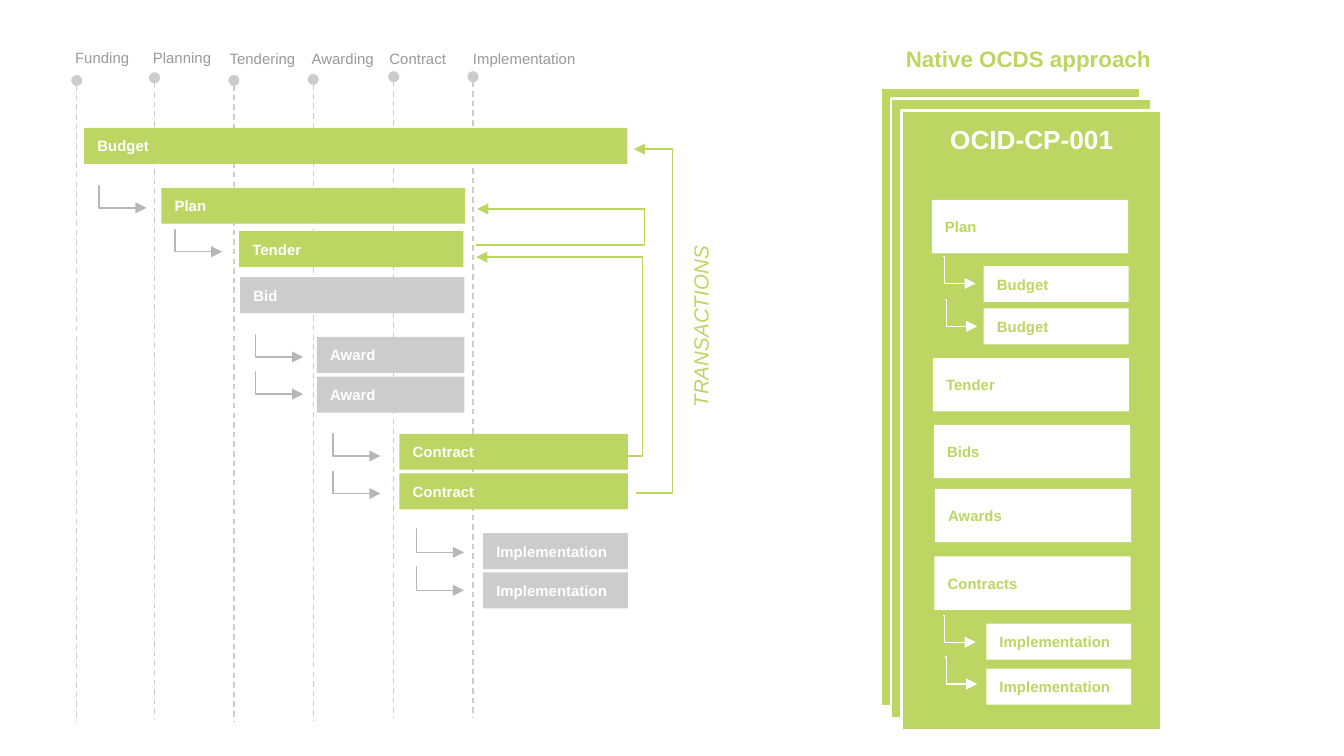
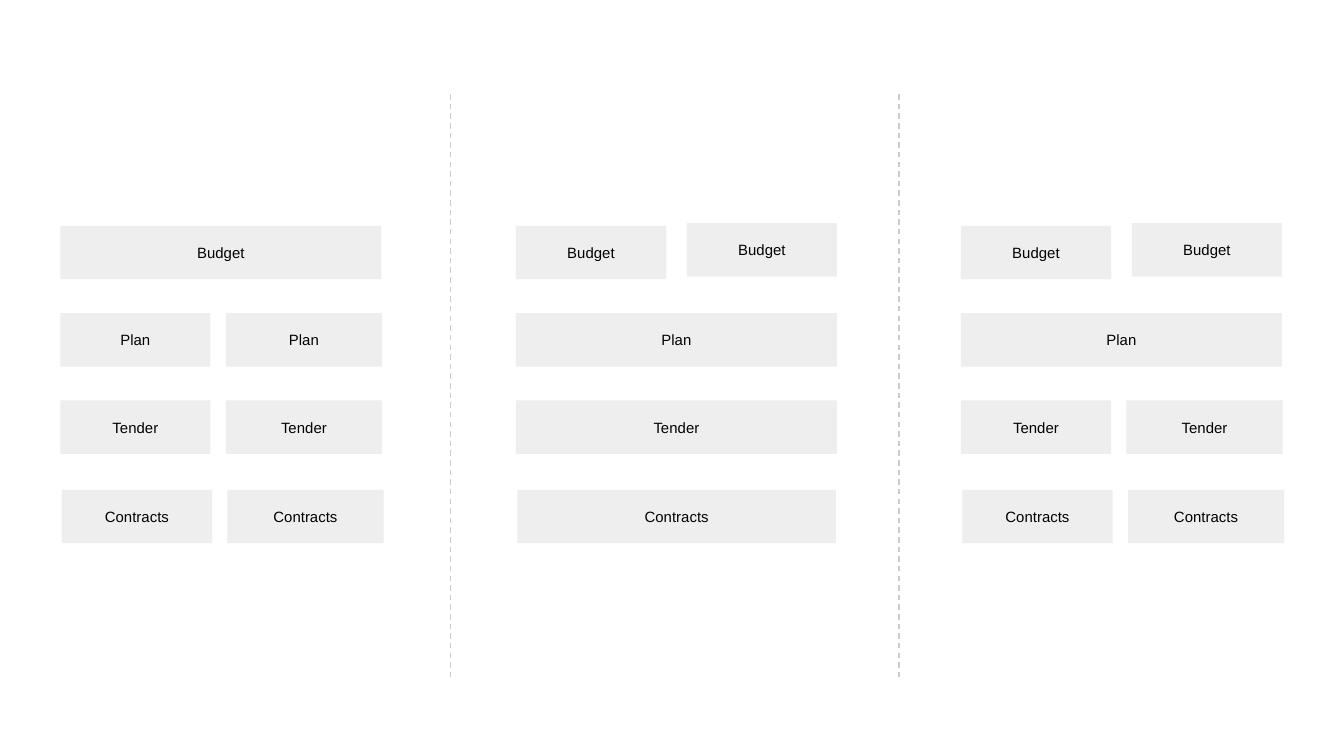
from lxml.etree import SubElement as Sub
from pptx import Presentation
from pptx.dml.color import RGBColor
from pptx.enum.dml import MSO_LINE
from pptx.enum.shapes import MSO_CONNECTOR as LINK, MSO_SHAPE
from pptx.enum.text import MSO_ANCHOR as ANCHOR, MSO_AUTO_SIZE as FIT, PP_ALIGN as ALIGN
from pptx.oxml.ns import qn
from pptx.util import Cm, Pt

GREEN = RGBColor(0xBC, 0xD5, 0x63)
WHITE = RGBColor(0xFF, 0xFF, 0xFF)
BLACK = RGBColor(0, 0, 0)
SILVER = RGBColor(0xCC, 0xCC, 0xCC)
PALE = RGBColor(0xEE, 0xEE, 0xEE)
STEEL = RGBColor(0xB7, 0xB7, 0xB7)
GREY = RGBColor(0x99, 0x99, 0x99)
RECT = MSO_SHAPE.RECTANGLE


def dress(shape, text, ink, size=8, bold=False, fill=None,
          align=ALIGN.LEFT, anchor=ANCHOR.TOP):
    """Fill a shape and set its text; return the paragraph and its run."""
    if fill is not None:
        shape.shadow.inherit = False
        shape.fill.solid()
        shape.fill.fore_color.rgb = fill
        shape.line.fill.background()
    frame = shape.text_frame
    frame.word_wrap = True
    frame.auto_size = FIT.NONE
    frame.vertical_anchor = anchor
    frame.margin_left = frame.margin_right = Cm(0.25)
    frame.margin_top = frame.margin_bottom = Cm(0.25)
    para = frame.paragraphs[0]
    para.alignment = align
    run = para.add_run()
    run.text = text
    run.font.name = "Arial"
    run.font.size = Pt(size)
    run.font.bold = bold
    run.font.color.rgb = ink
    return para, run


def wire(line, ink, dash=False, head=None, tail=None, bend=None):
    """Style a connector or an open outline."""
    line.line.color.rgb = ink
    line.line.width = Pt(0.75)
    if dash:
        line.line.dash_style = MSO_LINE.DASH
    props = line.element.spPr
    pen = props.find(qn("a:ln"))
    for tag, kind in (("a:headEnd", head), ("a:tailEnd", tail)):
        if kind:
            Sub(pen, qn(tag), type=kind)
    if bend is not None:
        guides = props.find(qn("a:prstGeom")).find(qn("a:avLst"))
        Sub(guides, qn("a:gd"), name="adj1", fmla=f"val {bend}")
    Sub(props, qn("a:effectLst"))


deck = Presentation()
deck.slide_width, deck.slide_height = Cm(25.4), Cm(14.29)

# Slide 1: process timeline beside the stacked record
slide = deck.slides.add_slide(deck.slide_layouts[5])
shapes = slide.shapes

title = shapes.title
title.left, title.top, title.width, title.height = map(Cm, (16.87, 0.61, 5.36, 0.89))
dress(title, "Native OCDS approach", GREEN, 12, True)

# Stacked cards, the front one named
for step in range(3):
    card = shapes.add_shape(RECT, Cm(16.64 + 0.2 * step), Cm(1.65 + 0.22 * step),
                            Cm(4.92), Cm(11.71))
    card.shadow.inherit = False
    card.fill.solid()
    card.fill.fore_color.rgb = GREEN
    card.line.color.rgb = WHITE
    card.line.width = Pt(1.5)
para, run = dress(card, "OCID-CP-001", WHITE, 14, True, align=ALIGN.CENTER)
para.space_before = Pt(10)

# Stages: label box, then the dashed line's start
stages = [
    ("Funding", 1.17, 0.66, 1.7, 1.45, 1.52),
    ("Planning", 2.64, 0.66, 1.7, 2.92, 1.47),
    ("Tendering", 4.09, 0.69, 2.18, 4.42, 1.52),
    ("Awarding", 5.64, 0.69, 2.18, 5.92, 1.5),
    ("Contract", 7.11, 0.69, 2.74, 7.44, 1.45),
    ("Implementation", 8.69, 0.69, 2.74, 8.94, 1.45),
]
for name, left, top, width, x, y in stages:
    line = shapes.add_connector(LINK.STRAIGHT, Cm(x), Cm(y), Cm(x), Cm(y + 12.12))
    wire(line, SILVER, dash=True, head="oval")
    label = shapes.add_textbox(Cm(left), Cm(top), Cm(width), Cm(0.89))
    dress(label, name, GREY)

# Timeline bars and record boxes
bars = [
    ("Budget", 1.59, 2.42, 10.27, GREEN),
    ("Plan", 3.05, 3.55, 5.74, GREEN),
    ("Tender", 4.52, 4.37, 4.24, GREEN),
    ("Bid", 4.54, 5.24, 4.24, SILVER),
    ("Award", 5.99, 6.37, 2.79, SILVER),
    ("Award", 5.99, 7.12, 2.79, SILVER),
    ("Contract", 7.55, 8.2, 4.32, GREEN),
    ("Contract", 7.55, 8.95, 4.32, GREEN),
    ("Implementation", 9.13, 10.08, 2.74, SILVER),
    ("Implementation", 9.13, 10.82, 2.74, SILVER),
    ("Budget", 18.59, 5.03, 2.74, WHITE),
    ("Budget", 18.59, 5.83, 2.74, WHITE),
    ("Implementation", 18.64, 11.79, 2.74, WHITE),
    ("Implementation", 18.64, 12.64, 2.74, WHITE),
    ("Plan", 17.61, 3.78, 3.71, WHITE),
    ("Tender", 17.63, 6.77, 3.71, WHITE),
    ("Bids", 17.65, 8.03, 3.71, WHITE),
    ("Awards", 17.67, 9.24, 3.71, WHITE),
    ("Contracts", 17.66, 10.52, 3.71, WHITE),
]
for name, x, y, width, fill in bars:
    tall = 1.01 if width == 3.71 else 0.68
    bar = shapes.add_shape(RECT, Cm(x), Cm(y), Cm(width), Cm(tall))
    ink = GREEN if fill == WHITE else WHITE
    dress(bar, name, ink, bold=True, fill=fill, anchor=ANCHOR.MIDDLE)

# Elbow arrows: colour, width, height, bend, starts
elbows = [
    (STEEL, 0.91, 0.42, 1700, [(1.86, 3.51), (3.29, 4.34), (4.82, 6.33), (4.82, 7.03),
                               (6.28, 8.2), (6.28, 8.91)]),
    (STEEL, 0.91, 0.45, 1800, [(7.86, 9.99), (7.86, 10.71)]),
    (WHITE, 0.61, 0.51, 4000, [(17.83, 4.85), (17.86, 5.66),
                               (17.83, 11.63), (17.86, 12.42)]),
]
for ink, width, tall, bend, starts in elbows:
    for x, y in starts:
        line = shapes.add_connector(LINK.ELBOW, Cm(x), Cm(y), Cm(x + width), Cm(y + tall))
        wire(line, ink, tail="triangle", bend=bend)

# Transaction loops: start, turning column, end
loops = [
    (11.76, 8.62, 12.14, 9, 4.86),
    (9, 4.63, 12.18, 9.02, 3.95),
    (12.02, 9.32, 12.71, 11.98, 2.82),
]
for x, y, turn, end, top in loops:
    pen = shapes.build_freeform(Cm(x), Cm(y))
    pen.add_line_segments([(Cm(turn), Cm(y)), (Cm(turn), Cm(top)), (Cm(end), Cm(top))],
                          close=False)
    loop = pen.convert_to_shape()
    loop.fill.background()
    wire(loop, GREEN, tail="triangle")

label = shapes.add_textbox(Cm(8.79), Cm(5.72), Cm(8.84), Cm(0.91))
label.rotation = 270
para, run = dress(label, "TRANSACTIONS", GREEN, 11, align=ALIGN.CENTER)
run.font.italic = True

# Slide 2: three ways the stages can combine
slide = deck.slides.add_slide(deck.slide_layouts[6])
shapes = slide.shapes

# Rows: name, top, shift, full width, right half, its rise, boxes per column
rows = [
    ("Budget", 4.27, 0, 6.07, (3.23, 2.84), 0.05, (1, 2, 2)),
    ("Plan", 5.92, 0, 6.07, (3.13, 2.95), 0, (2, 1, 1)),
    ("Tender", 7.57, 0, 6.07, (3.13, 2.95), 0, (2, 1, 2)),
    ("Contracts", 9.26, 0.03, 6.02, (3.13, 2.95), 0, (2, 1, 2)),
]
for name, top, shift, full, half, rise, counts in rows:
    for left, count in zip((1.14, 9.75, 18.16), counts):
        spans = [(0, full, 0)] if count == 1 else [(0, 2.84, 0), (*half, rise)]
        for off, width, lift in spans:
            box = shapes.add_shape(RECT, Cm(left + shift + off), Cm(top - lift),
                                   Cm(width), Cm(1.01))
            dress(box, name, BLACK, fill=PALE, align=ALIGN.CENTER, anchor=ANCHOR.MIDDLE)

# Column dividers
for x in (8.51, 16.99):
    line = shapes.add_connector(LINK.STRAIGHT, Cm(x), Cm(1.78), Cm(x), Cm(12.8))
    wire(line, SILVER, dash=True)

deck.save("out.pptx")
